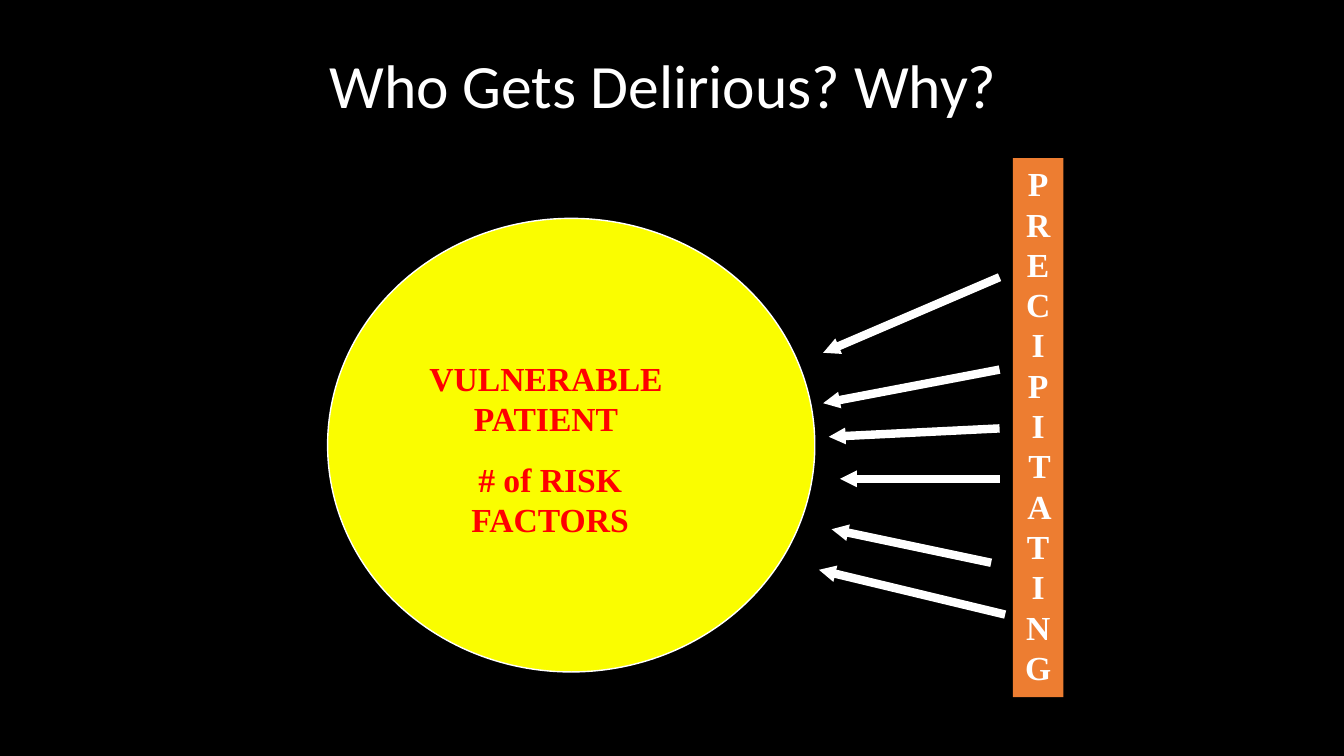
from lxml.etree import SubElement
from pptx import Presentation
from pptx.dml.color import RGBColor
from pptx.enum.shapes import MSO_CONNECTOR, MSO_SHAPE
from pptx.enum.text import MSO_ANCHOR, MSO_AUTO_SIZE, PP_ALIGN
from pptx.oxml.ns import qn
from pptx.util import Pt

COLORS = {"black": "000000", "white": "FFFFFF", "yellow": "FAFD00",
          "red": "FF0000", "orange": "ED7D31"}

# Boxes are left, top, width, height in points
TITLE, TITLE_BOX = "Who Gets Delirious? Why?", (228, 18, 594, 90)
PATIENT_BOX = (234, 156, 348, 324)
PATIENT_LABELS = [
    ("VULNERABLE PATIENT", (294, 252, 192, 65.5)),
    ("# of RISK FACTORS", (318, 324, 150, 65.5)),
]
# The bar is one letter wide, so its word wraps into a column
FACTOR, FACTOR_BOX = "PRECIPITATING", (723.6, 113, 36, 385)
# Start x, start y, end x, end y in points
ARROWS = [
    (714, 198, 588, 252),
    (714, 264, 588, 288),
    (714, 306, 592, 312),
    (714, 342, 600, 342),
    (708, 402, 594, 378),
    (718, 439, 585, 407),
]
TITLE_FONT = {"name": "Calibri", "size": Pt(44), "bold": False}
LABEL_FONT = {"name": "Times New Roman", "size": Pt(24), "bold": True}


def rgb(color):
    return RGBColor.from_string(COLORS[color])


def points(values):
    return [Pt(value) for value in values]


def write(shape, text, font, color, align, anchor=MSO_ANCHOR.TOP):
    frame = shape.text_frame
    frame.text = text
    frame.word_wrap = True
    frame.auto_size = MSO_AUTO_SIZE.NONE
    frame.vertical_anchor = anchor
    paragraph = frame.paragraphs[0]
    paragraph.alignment = align
    run_font = paragraph.runs[0].font
    for attribute, value in font.items():
        setattr(run_font, attribute, value)
    run_font.color.rgb = rgb(color)
    return paragraph


def add_filled(shapes, kind, box, color):
    shape = shapes.add_shape(kind, *points(box))
    shape.shadow.inherit = False
    shape.fill.solid()
    shape.fill.fore_color.rgb = rgb(color)
    shape.line.fill.background()
    return shape


def add_arrow(shapes, ends):
    arrow = shapes.add_connector(MSO_CONNECTOR.STRAIGHT, *points(ends))
    arrow.line.color.rgb = rgb("white")
    arrow.line.width = Pt(6)
    SubElement(arrow.line._get_or_add_ln(), qn("a:tailEnd"),
               type="triangle", w="sm", len="sm")
    SubElement(arrow._element.spPr, qn("a:effectLst"))


def main():
    prs = Presentation()
    prs.slide_width, prs.slide_height = Pt(960), Pt(540)
    slide = prs.slides.add_slide(prs.slide_layouts[5])
    slide.background.fill.solid()
    slide.background.fill.fore_color.rgb = rgb("black")
    shapes = slide.shapes

    title = shapes.title
    title.left, title.top, title.width, title.height = points(TITLE_BOX)
    heading = write(title, TITLE, TITLE_FONT, "white", PP_ALIGN.LEFT, MSO_ANCHOR.MIDDLE)
    heading.line_spacing = 0.9

    patient = add_filled(shapes, MSO_SHAPE.OVAL, PATIENT_BOX, "yellow")
    patient.line.color.rgb = rgb("white")
    patient.line.width = Pt(1)
    for text, box in PATIENT_LABELS:
        label = shapes.add_textbox(*points(box))
        write(label, text, LABEL_FONT, "red", PP_ALIGN.CENTER)

    factor = add_filled(shapes, MSO_SHAPE.RECTANGLE, FACTOR_BOX, "orange")
    write(factor, FACTOR, LABEL_FONT, "white", PP_ALIGN.CENTER)
    for ends in ARROWS:
        add_arrow(shapes, ends)

    prs.save("out.pptx")


if __name__ == "__main__":
    main()
